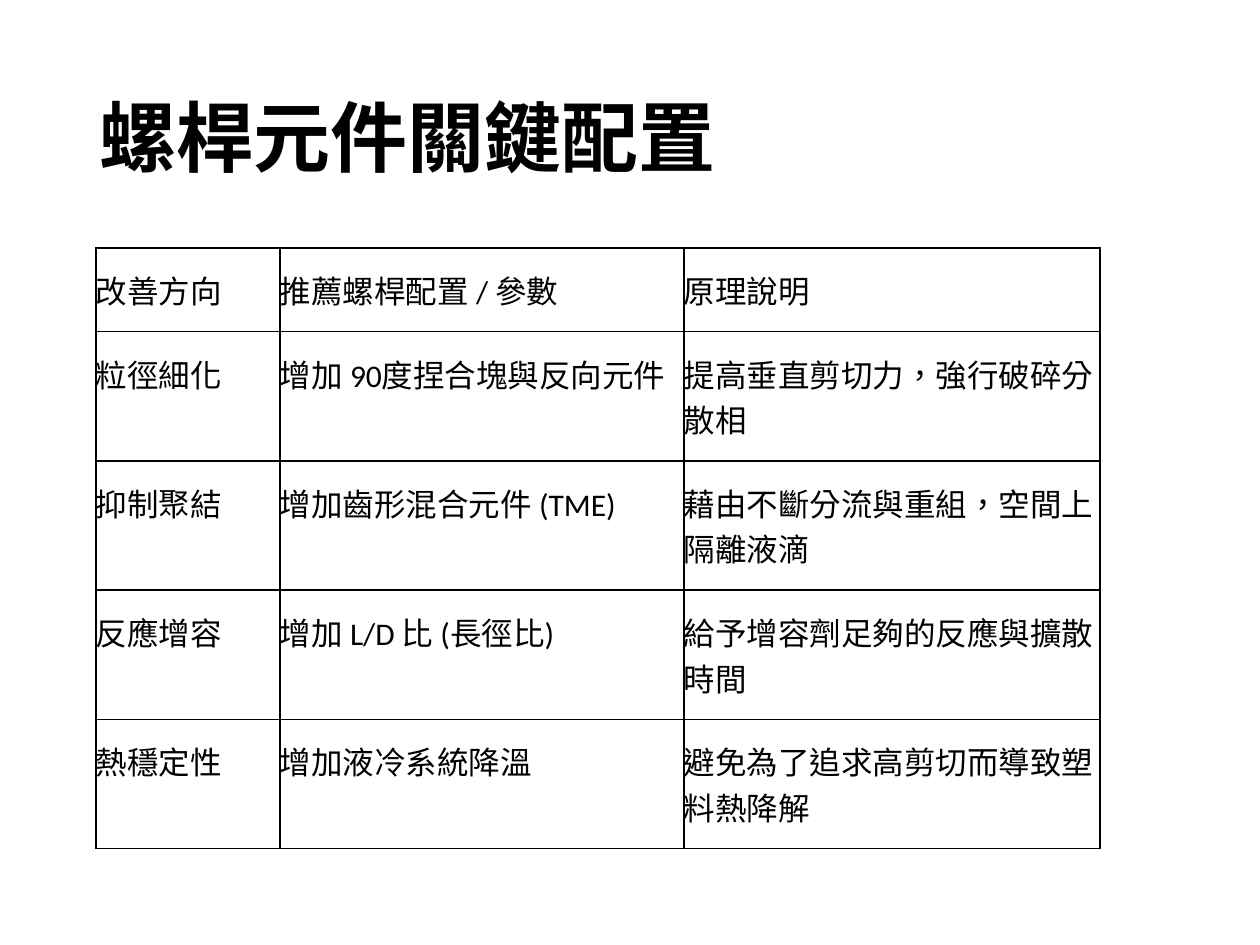
from lxml.etree import SubElement
from pptx import Presentation
from pptx.dml.color import RGBColor
from pptx.enum.lang import MSO_LANGUAGE_ID as Language
from pptx.enum.text import MSO_ANCHOR as Anchor, MSO_AUTO_SIZE as AutoSize, PP_ALIGN as Align
from pptx.oxml.ns import qn
from pptx.util import Emu, Pt

BLACK = RGBColor(0x00, 0x00, 0x00)
PX_PER_INCH = 126


def px(length):
    return Emu(round(length * 914400 / PX_PER_INCH))


class SlideBuilder:
    font = "Calibri"
    title_size = 44
    body_size = 18
    border_width = 1
    cell_padding = 19
    column_gap = 15

    def __init__(self, slide):
        self.slide = slide

    def add_text(self, frame, text, size, bold=False):
        paragraph = frame.paragraphs[0]
        paragraph.alignment = Align.LEFT
        run = paragraph.add_run()
        run.text = text
        run.font.name = self.font
        run.font.size = Pt(size)
        run.font.bold = bold
        run.font.color.rgb = BLACK
        run.font.language_id = Language.TRADITIONAL_CHINESE
        return paragraph

    def title(self, text, left, top, width, height):
        heading = self.slide.shapes.title
        heading.left, heading.top = px(left), px(top)
        heading.width, heading.height = px(width), px(height)
        frame = heading.text_frame
        frame.auto_size = AutoSize.NONE
        frame.vertical_anchor = Anchor.MIDDLE
        self.add_text(frame, text, self.title_size, bold=True).line_spacing = 0.9

    def border(self, cell):
        properties = cell._tc.get_or_add_tcPr()
        for side in ("a:lnL", "a:lnR", "a:lnT", "a:lnB"):
            line = SubElement(properties, qn(side), w=str(Pt(self.border_width)))
            fill = SubElement(line, qn("a:solidFill"))
            SubElement(fill, qn("a:srgbClr"), val=str(BLACK))

    def table(self, rows, left, top, widths, heights):
        grid = self.slide.shapes.add_table(
            len(rows), len(widths), px(left), px(top), px(sum(widths)), px(sum(heights))
        ).table
        grid.first_row = False
        grid.horz_banding = False
        for column, width in zip(grid.columns, widths):
            column.width = px(width)
        for row, height, texts in zip(grid.rows, heights, rows):
            row.height = px(height)
            for index, (cell, text) in enumerate(zip(row.cells, texts)):
                is_last = index == len(widths) - 1
                cell.margin_left = 0
                cell.margin_right = px(0 if is_last else self.column_gap)
                cell.margin_top = cell.margin_bottom = px(self.cell_padding)
                self.border(cell)
                cell.fill.background()
                self.add_text(cell.text_frame, text, self.body_size)


SCREW_SETTINGS = [
    ("改善方向", "推薦螺桿配置 / 參數", "原理說明"),
    ("粒徑細化", "增加 90度捏合塊與反向元件", "提高垂直剪切力，強行破碎分散相"),
    ("抑制聚結", "增加齒形混合元件 (TME)", "藉由不斷分流與重組，空間上隔離液滴"),
    ("反應增容", "增加 L/D 比 (長徑比)", "給予增容劑足夠的反應與擴散時間"),
    ("熱穩定性", "增加液冷系統降溫", "避免為了追求高剪切而導致塑料熱降解"),
]


def main():
    deck = Presentation()
    deck.slide_width, deck.slide_height = px(1260), px(945)
    title_only = deck.slide_layouts[5]
    builder = SlideBuilder(deck.slides.add_slide(title_only))
    builder.title("螺桿元件關鍵配置", 87, 50, 1086, 183)
    builder.table(SCREW_SETTINGS, 96, 248, (184, 404, 416), (60, 108, 113, 108, 105))
    deck.save("out.pptx")


if __name__ == "__main__":
    main()
